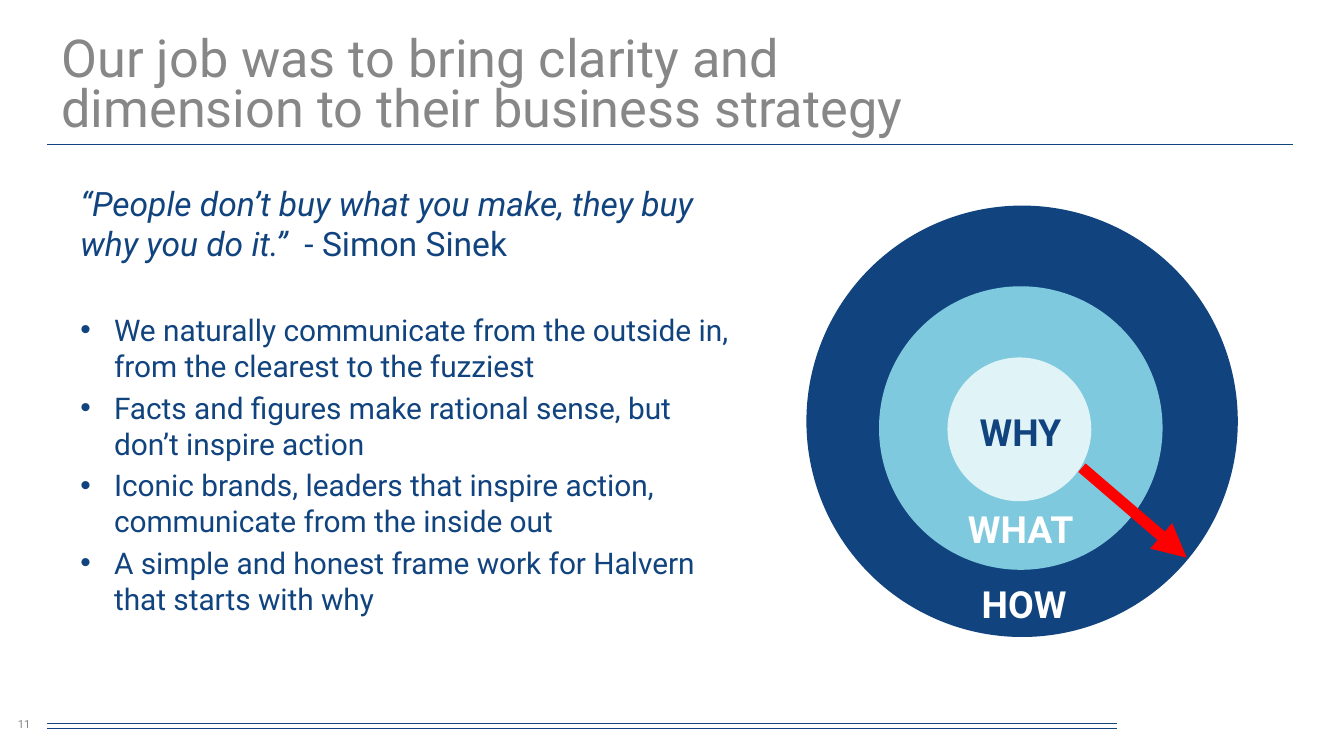
"""Build the slide on clarity and business strategy."""
import pptx
import pptx.util
import pptx.dml.color
import pptx.enum.shapes
import pptx.enum.text
import pptx.oxml.ns
from lxml import etree

Inches, Pt = pptx.util.Inches, pptx.util.Pt
ALIGN = pptx.enum.text.PP_ALIGN
MID = pptx.enum.text.MSO_ANCHOR.MIDDLE
TOP = pptx.enum.text.MSO_ANCHOR.TOP

NAVY, GRAY, WHITE = "11447F", "878787", "FFFFFF"
TITLE = ["Our job was to bring clarity and ", "dimension to their business strategy"]
QUOTE = "“People don’t buy what you make, they buy why you do it.”  "
AUTHOR = "- Simon Sinek"
POINTS = [
    "We naturally communicate from the outside in, from the clearest to the fuzziest",
    "Facts and figures make rational sense, but don’t inspire action",
    "Iconic brands, leaders that inspire action, communicate from the inside out",
    "A simple and honest frame work for Halvern that starts with why",
]
RULES = [(0.35, 5.42, 8.31, 5.42), (0.35, 5.38, 8.31, 5.38), (0.35, 1.07, 9.62, 1.07)]
RINGS = [(6, 1.53, 3.21, NAVY), (6.54, 2.13, 2.11, "7FC9DF"), (7.05, 2.66, 1.07, "E0F3F7")]
LABELS = [
    ("WHY", (7.19, 2.96, 0.88, 0.51), NAVY, ALIGN.LEFT),
    ("HOW", (6.52, 4.2, 2.2, 0.58), WHITE, ALIGN.CENTER),
    ("WHAT", (6.54, 3.51, 2.11, 0.84), WHITE, ALIGN.CENTER),
]
ARROW = (8.05, 3.48, 8.83, 4.15)


def color(code):
    return pptx.dml.color.RGBColor.from_string(code)


def node(parent, tag, **attrs):
    return etree.SubElement(parent, pptx.oxml.ns.qn(tag), attrs)


def style(font, size, code, **look):
    for key, val in {"name": "Roboto", "size": Pt(size), **look}.items():
        setattr(font, key, val)
    font.color.rgb = color(code)


def box(slide, place, anchor=MID):
    frame = slide.shapes.add_textbox(*map(Inches, place)).text_frame
    frame.word_wrap, frame.vertical_anchor = True, anchor
    return frame


def line(slide, ends, code, width):
    kind = pptx.enum.shapes.MSO_CONNECTOR.STRAIGHT
    link = slide.shapes.add_connector(kind, *map(Inches, ends))
    link.line.color.rgb, link.line.width = color(code), Pt(width)
    node(link._element.spPr, "a:effectLst")
    return link


def label(slide, text, place, size, code, align=ALIGN.CENTER, **look):
    para = box(slide, place).paragraphs[0]
    para.text, para.alignment = text, align
    style(para.runs[0].font, size, code, **look)


def head(slide):
    para = box(slide, (0.36, 0.23, 9.34, 0.9), TOP).paragraphs[0]
    para.text, para.line_spacing = "\v".join(TITLE), 0.8
    for run in para.runs:
        style(run.font, 28, GRAY)


def body(slide):
    frame = box(slide, (0.5, 1.31, 5.11, 3.71), TOP)
    for text, slant in ((QUOTE, True), (AUTHOR, False)):
        run = frame.paragraphs[0].add_run()
        run.text = text
        style(run.font, 18, NAVY, italic=slant)
    for i, text in enumerate(POINTS):
        para = frame.add_paragraph()
        para.space_before = Pt(3.2 if i else 26)
        props = para._p.get_or_add_pPr()
        props.set("marL", str(Inches(0.25)))
        props.set("indent", str(Inches(-0.25)))
        node(props, "a:buFont", typeface="Arial")
        node(props, "a:buChar", char="•")
        run = para.add_run()
        run.text = text
        style(run.font, 16, NAVY)


def rings(slide):
    for x, y, size, code in RINGS:
        ring = slide.shapes.add_shape(
            pptx.enum.shapes.MSO_SHAPE.OVAL, *map(Inches, (x, y, size, size)))
        ring.shadow.inherit = False
        ring.fill.solid()
        ring.fill.fore_color.rgb = color(code)
        ring.line.fill.background()
    for text, place, code, align in LABELS:
        label(slide, text, place, 20, code, align, bold=True)
    arrow = line(slide, ARROW, "FF0000", 6)
    node(arrow.line._get_or_add_ln(), "a:tailEnd", type="triangle")


def main():
    deck = pptx.Presentation()
    deck.slide_width = Inches(10)
    deck.slide_height = deck.slide_width * 9 // 16
    slide = deck.slides.add_slide(deck.slide_layouts[6])
    for ends in RULES:
        line(slide, ends, NAVY, 0.25)
    label(slide, "11", (0, 5.24, 0.36, 0.3), 6, GRAY)
    head(slide)
    body(slide)
    rings(slide)
    deck.save("out.pptx")


if __name__ == "__main__":
    main()
